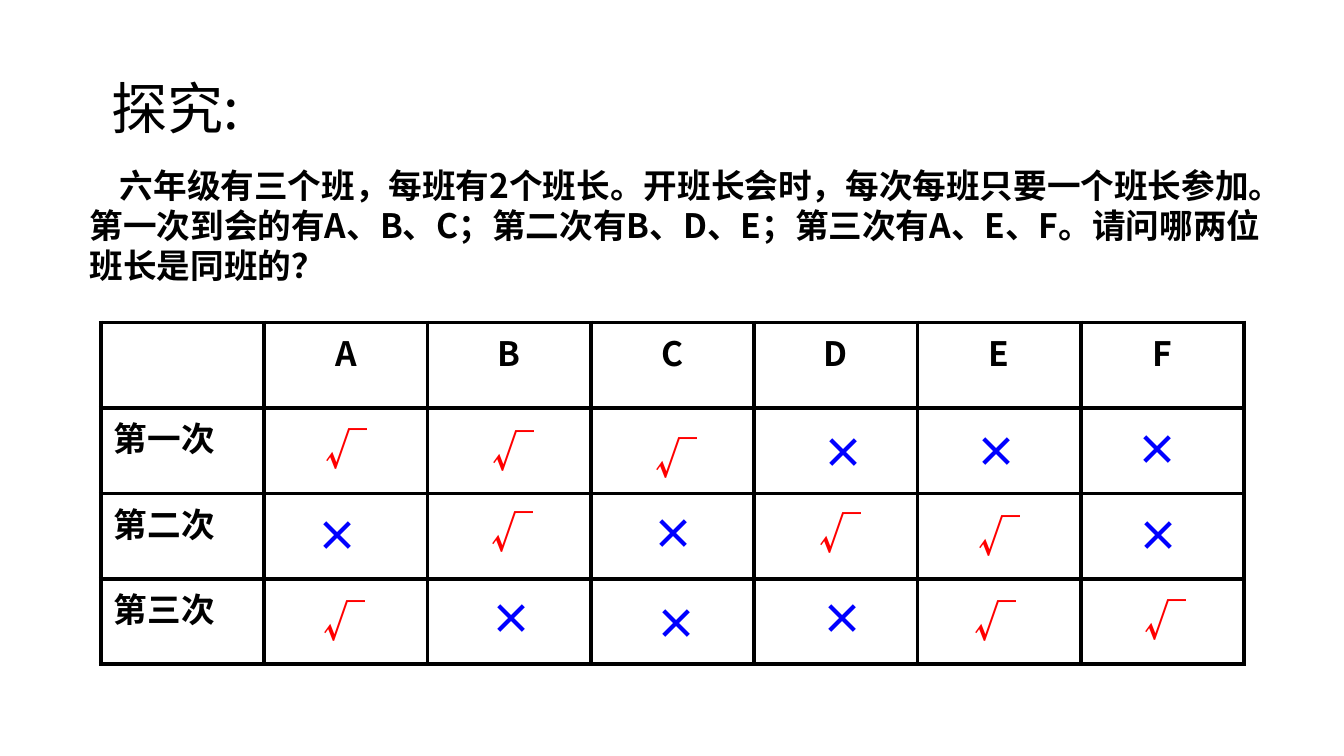
from lxml import etree
from pptx import Presentation
from pptx.dml.color import RGBColor
from pptx.enum.text import MSO_ANCHOR, MSO_AUTO_SIZE, PP_ALIGN
from pptx.oxml.ns import qn
from pptx.util import Inches, Pt

CENTER, LEFT = PP_ALIGN.CENTER, PP_ALIGN.LEFT
TOP, MIDDLE = MSO_ANCHOR.TOP, MSO_ANCHOR.MIDDLE
NO_AUTOFIT = MSO_AUTO_SIZE.NONE

COLORS = {"text": "000000", "√": "FF0000", "×": "0000FF"}
SANS, SERIF = "Noto Sans CJK SC", "Times New Roman"
LINE_FACTOR = 1.19

QUESTION = (
    "六年级有三个班，每班有2个班长。开班长会时，每次每班只要一个班长参加。"
    "第一次到会的有A、B、C；第二次有B、D、E；第三次有A、E、F。"
    "请问哪两位班长是同班的？"
)
LEADERS = "ABCDEF"
MEETINGS = ["第一次", "第二次", "第三次"]

# Each mark: symbol, horizontal centre, top
MARKS = [
    # First meeting
    ("√", 3.44, 4.16), ("√", 5.09, 4.18), ("√", 6.71, 4.25),
    ("×", 8.37, 4.19), ("×", 9.88, 4.18), ("×", 11.48, 4.16),
    # Second meeting
    ("×", 3.35, 5.01), ("√", 5.08, 4.98), ("×", 6.68, 4.99),
    ("√", 8.34, 4.99), ("√", 9.91, 5.02), ("×", 11.49, 5.01),
    # Third meeting
    ("√", 3.42, 5.86), ("×", 5.07, 5.83), ("×", 6.71, 5.88),
    ("×", 8.36, 5.83), ("√", 9.87, 5.86), ("√", 11.56, 5.85),
]
MARK_WIDTH, MARK_HEIGHT = 1.28, 0.61


def write(text_frame, text, size, color="text", bold=True, align=LEFT, font=SANS):
    text_frame.text = text
    paragraph = text_frame.paragraphs[0]
    paragraph.alignment = align
    run = paragraph.runs[0]
    run.font.name = font
    run.font.size = Pt(size)
    run.font.bold = bold
    run.font.color.rgb = RGBColor.from_string(COLORS[color])
    east_asian = etree.SubElement(run.font._element, qn("a:ea"))
    east_asian.set("typeface", SANS)
    return paragraph


def add_title(slide):
    title = slide.shapes.title
    title.left, title.top = Inches(0.58), Inches(0.68)
    title.width, title.height = Inches(2.31), Inches(0.69)
    frame = title.text_frame
    paragraph = write(frame, "探究:", 40, bold=False, align=CENTER)
    paragraph.line_spacing = Pt(40 * LINE_FACTOR)
    frame.word_wrap = False
    frame.auto_size = NO_AUTOFIT
    frame.vertical_anchor = TOP


def add_text(slide, text, left, top, width, height, size, anchor=TOP, **style):
    box = slide.shapes.add_textbox(
        Inches(left), Inches(top), Inches(width), Inches(height))
    frame = box.text_frame
    frame.word_wrap = True
    frame.vertical_anchor = anchor
    paragraph = write(frame, text, size, **style)
    paragraph.line_spacing = Pt(size * LINE_FACTOR)
    return paragraph


def format_cell(cell):
    cell.fill.background()
    cell.margin_left = cell.margin_right = Inches(0.13)
    cell.margin_top = cell.margin_bottom = Inches(0.05)
    properties = cell._tc.get_or_add_tcPr()
    for index, side in enumerate(("a:lnL", "a:lnR", "a:lnT", "a:lnB")):
        line = etree.Element(qn(side), w=str(Pt(3)))
        fill = etree.SubElement(line, qn("a:solidFill"))
        etree.SubElement(fill, qn("a:srgbClr"), val=COLORS["text"])
        properties.insert(index, line)


def add_attendance_table(slide):
    rows, columns = len(MEETINGS) + 1, len(LEADERS) + 1
    table = slide.shapes.add_table(
        rows, columns, Inches(1), Inches(3.2), Inches(11.34), Inches(3.39)).table
    for column in table.columns:
        column.width = Inches(1.62)
    for row in table.rows:
        row.height = Inches(3.39 / rows)
    for cell in table.iter_cells():
        format_cell(cell)
    for index, leader in enumerate(LEADERS, 1):
        write(table.cell(0, index).text_frame, leader, 24, align=CENTER)
    for index, meeting in enumerate(MEETINGS, 1):
        write(table.cell(index, 0).text_frame, meeting, 24, font=SERIF)


def main():
    presentation = Presentation()
    presentation.slide_width = Inches(13.33)
    presentation.slide_height = Inches(7.5)
    slide = presentation.slides.add_slide(presentation.slide_layouts[5])

    # Heading and question
    add_title(slide)
    question = add_text(slide, QUESTION, 0.79, 1.58, 12.08, 1.31, 24, anchor=MIDDLE)
    question._p.get_or_add_pPr().set("indent", str(Inches(0.3)))

    # Attendance table with its marks
    add_attendance_table(slide)
    for symbol, center, top in MARKS:
        add_text(slide, symbol, center - MARK_WIDTH / 2, top, MARK_WIDTH,
                 MARK_HEIGHT, 30, color=symbol, align=CENTER)

    presentation.save("out.pptx")


if __name__ == "__main__":
    main()
